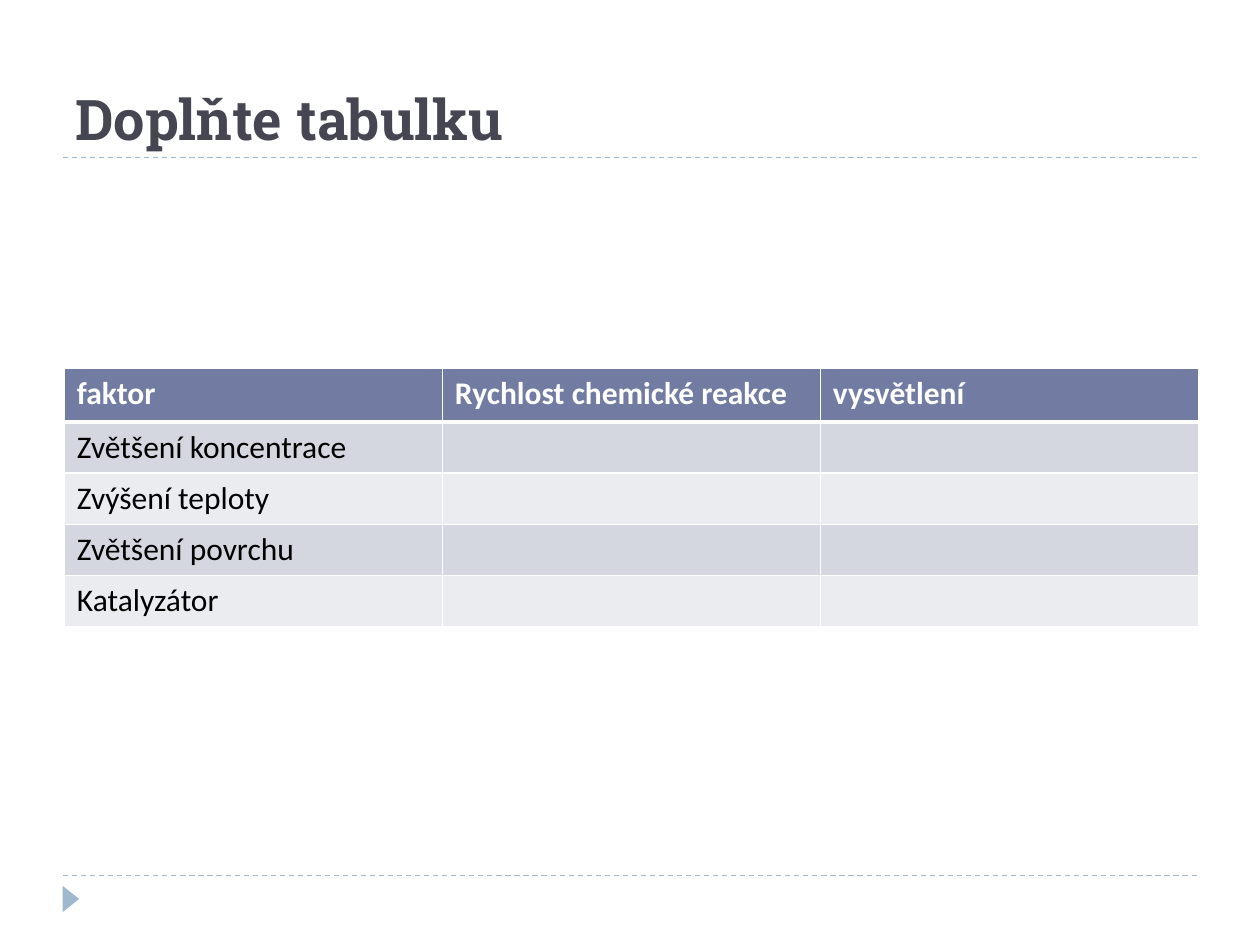
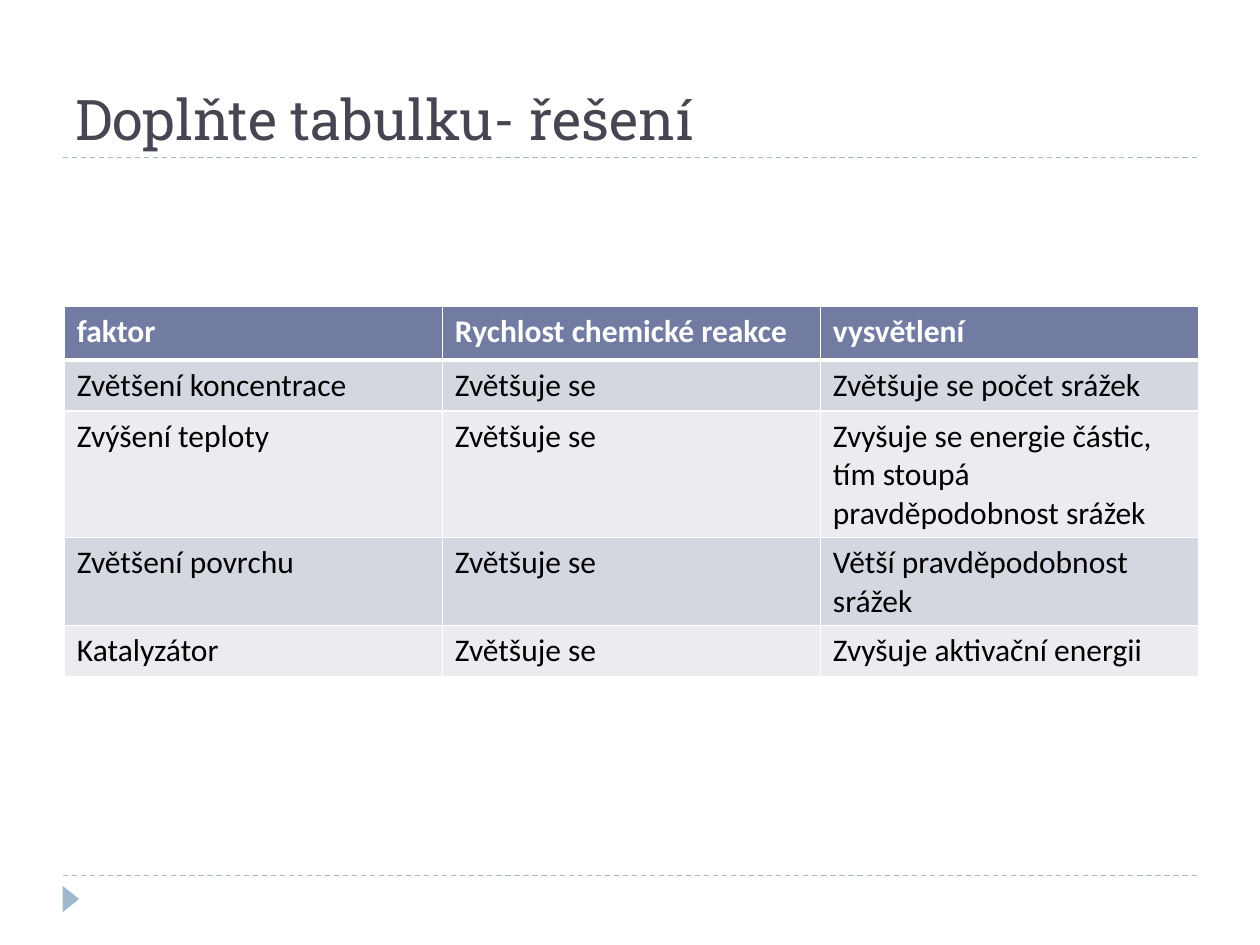
from lxml.etree import SubElement
from pptx import Presentation
from pptx.dml.color import RGBColor
from pptx.enum.dml import MSO_LINE
from pptx.enum.shapes import MSO_CONNECTOR, MSO_SHAPE
from pptx.enum.text import MSO_ANCHOR
from pptx.oxml.ns import qn
from pptx.util import Pt

TITLE_INK = RGBColor(0x46, 0x46, 0x53)
ACCENT = RGBColor(0x9F, 0xB8, 0xCD)
HEADER = RGBColor(0x72, 0x7C, 0xA3)
BANDS = RGBColor(0xEB, 0xEC, 0xF0), RGBColor(0xD5, 0xD7, 0xE0)
WHITE = RGBColor(0xFF, 0xFF, 0xFF)
BLACK = RGBColor(0x00, 0x00, 0x00)

TITLE_FONT, BODY_FONT = "Roboto Slab", "Calibri"
MARGIN, CONTENT_WIDTH = 36, 648
TITLE_RULE, FOOTER_RULE = 90, 500.4
HEADER_HEIGHT, ROW_HEIGHT = 30.6, 29.2
THIN, THICK = 1, 3

COLUMNS = ("faktor", "Rychlost chemické reakce", "vysvětlení")
FACTORS = ("Zvětšení koncentrace", "Zvýšení teploty", "Zvětšení povrchu", "Katalyzátor")
EXPLANATIONS = (
    "Zvětšuje se počet srážek",
    "Zvyšuje se energie částic, tím stoupá pravděpodobnost srážek",
    "Větší pravděpodobnost srážek",
    "Zvyšuje aktivační energii",
)


class Lesson:
    """Holds the deck, its style and the slide being filled."""

    def __init__(self):
        self.deck = Presentation()
        self.deck.slide_width, self.deck.slide_height = Pt(720), Pt(540)
        self.slide = None

    def add_slide(self, title, bold=False):
        self.slide = self.deck.slides.add_slide(self.deck.slide_layouts[6])
        for top in (FOOTER_RULE, TITLE_RULE):
            self.add_rule(top)
        self.add_marker()
        self.add_title(title, bold)

    def add_rule(self, top):
        rule = self.slide.shapes.add_connector(
            MSO_CONNECTOR.STRAIGHT, Pt(MARGIN), Pt(top), Pt(MARGIN + CONTENT_WIDTH), Pt(top))
        rule.line.color.rgb = ACCENT
        rule.line.width = Pt(0.75)
        rule.line.dash_style = MSO_LINE.DASH
        SubElement(rule.element.spPr, qn("a:effectLst"))

    def add_marker(self):
        marker = self.slide.shapes.add_shape(
            MSO_SHAPE.ISOSCELES_TRIANGLE, Pt(33), Pt(509), Pt(15), Pt(9.4))
        marker.rotation = 90
        marker.shadow.inherit = False
        marker.fill.solid()
        marker.fill.fore_color.rgb = ACCENT
        marker.line.fill.background()

    def add_title(self, text, bold):
        box = self.slide.shapes.add_textbox(Pt(MARGIN), Pt(12), Pt(CONTENT_WIDTH), Pt(78))
        box.text_frame.word_wrap = True
        box.text_frame.vertical_anchor = MSO_ANCHOR.BOTTOM
        self.set_text(box.text_frame, text, TITLE_FONT, 32, TITLE_INK, bold)

    def add_table(self, top, rows):
        height = HEADER_HEIGHT + ROW_HEIGHT * len(rows)
        table = self.slide.shapes.add_table(
            len(rows) + 1, len(COLUMNS), Pt(36.8), Pt(top), Pt(CONTENT_WIDTH), Pt(height)).table
        for row_index, texts in enumerate((COLUMNS, *rows)):
            is_header = row_index == 0
            table.rows[row_index].height = Pt(HEADER_HEIGHT if is_header else ROW_HEIGHT)
            for column_index, text in enumerate(texts):
                cell = table.cell(row_index, column_index)
                self.add_borders(cell, top=THICK if row_index == 1 else THIN,
                                 bottom=THICK if is_header else THIN)
                cell.fill.solid()
                cell.fill.fore_color.rgb = HEADER if is_header else BANDS[row_index % 2]
                self.set_text(cell.text_frame, text, BODY_FONT, 18,
                              WHITE if is_header else BLACK, is_header)

    def add_borders(self, cell, top, bottom):
        """Draw white borders; call before the fill, which must follow them in the XML."""
        properties = cell._tc.get_or_add_tcPr()
        for side, width in (("L", THIN), ("R", THIN), ("T", top), ("B", bottom)):
            border = SubElement(properties, qn(f"a:ln{side}"), w=str(Pt(width)))
            fill = SubElement(border, qn("a:solidFill"))
            SubElement(fill, qn("a:srgbClr"), val=str(WHITE))

    def set_text(self, frame, text, font_name, size, color, bold):
        para = frame.paragraphs[0]
        if text:
            para.add_run().text = text
        para.font.name = font_name
        para.font.size = Pt(size)
        para.font.color.rgb = color
        para.font.bold = bold


def main():
    lesson = Lesson()

    lesson.add_slide("Doplňte tabulku", bold=True)
    lesson.add_table(210.6, [(factor, "", "") for factor in FACTORS])

    lesson.add_slide("Doplňte tabulku- řešení")
    lesson.add_table(175.2, [(factor, "Zvětšuje se", explanation)
                             for factor, explanation in zip(FACTORS, EXPLANATIONS)])

    lesson.deck.save("out.pptx")


if __name__ == "__main__":
    main()
